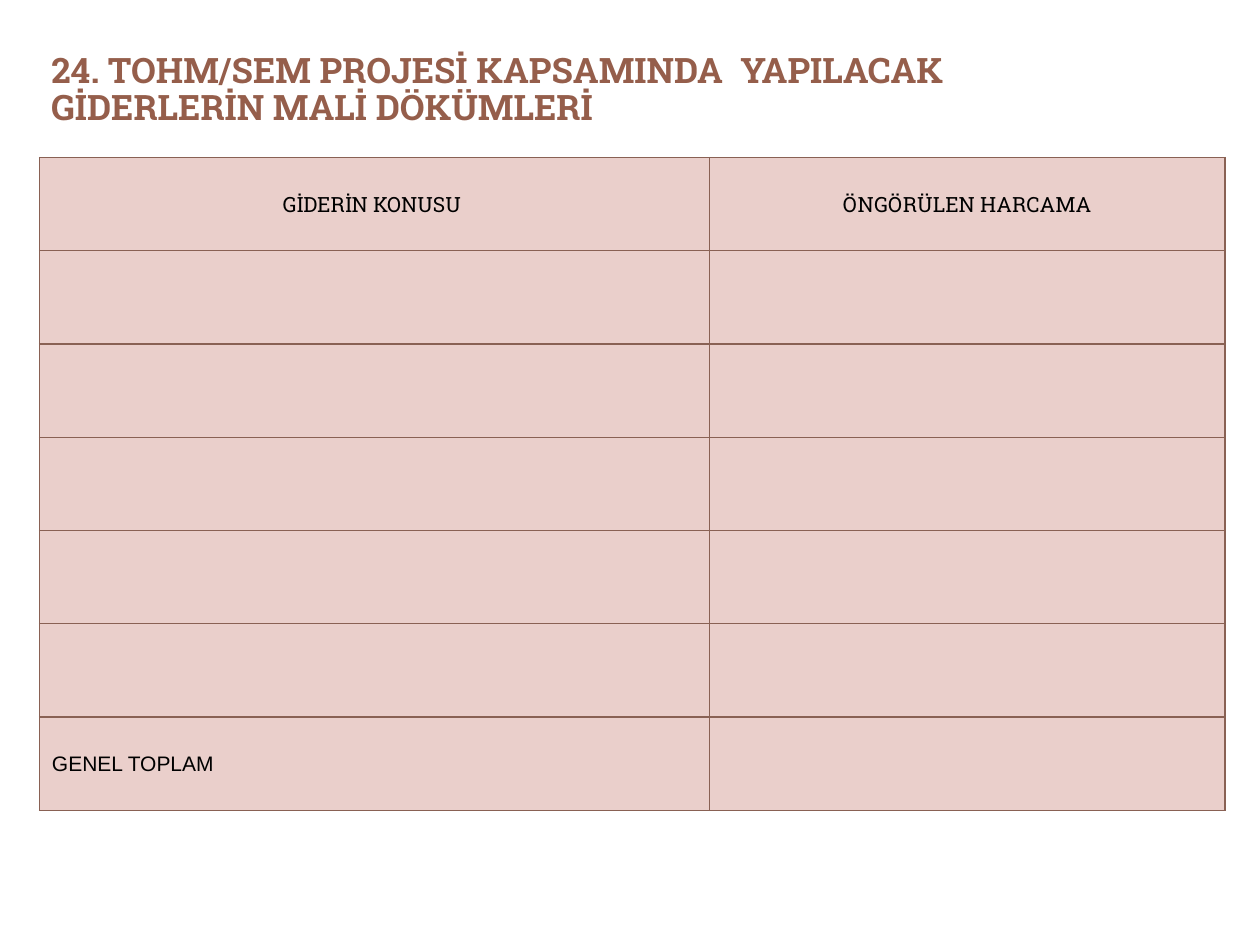
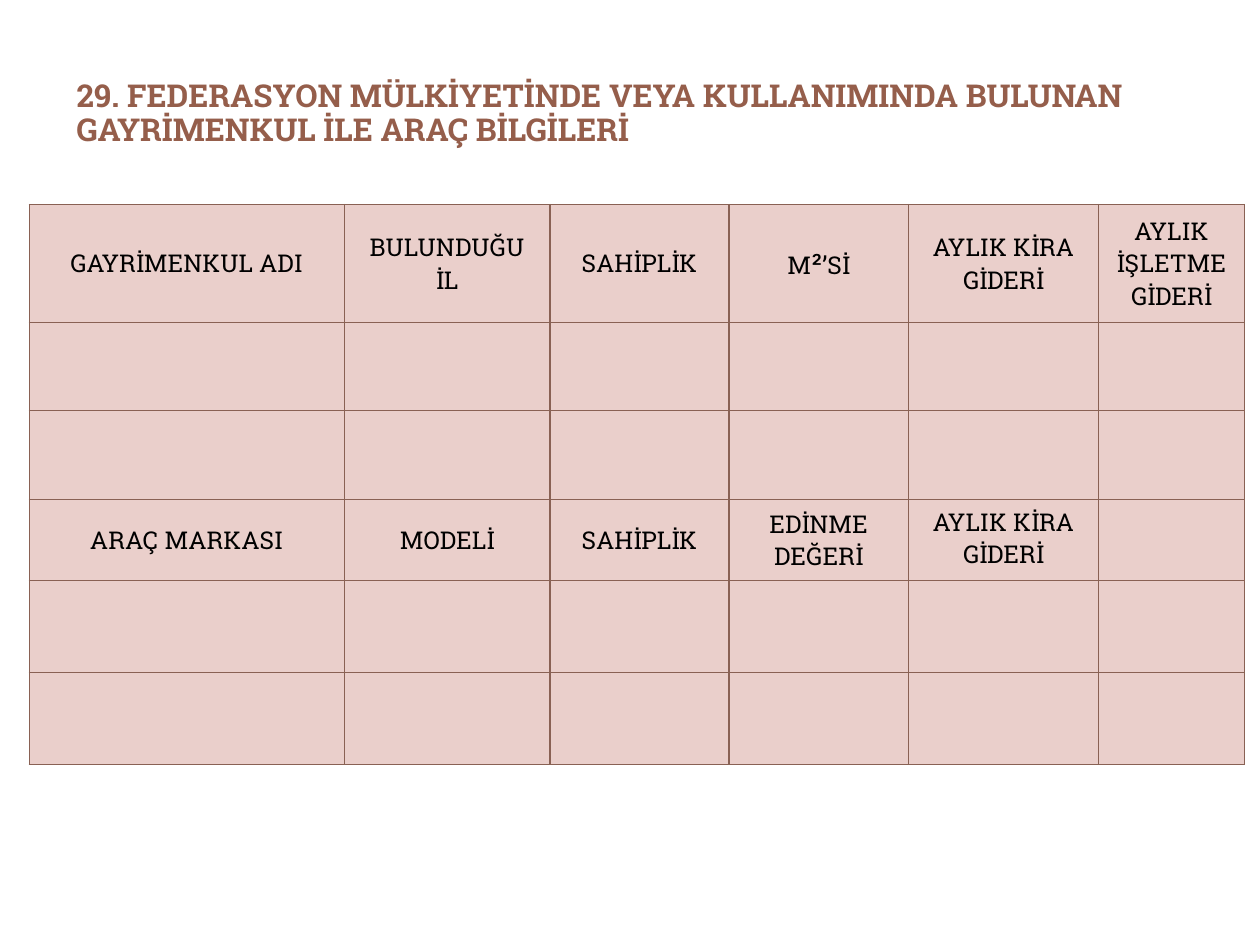
import pptx
import pptx.util
import pptx.dml.color
import pptx.enum.text
import pptx.oxml

Pt = pptx.util.Pt
ALIGN = pptx.enum.text.PP_ALIGN
ANCHOR = pptx.enum.text.MSO_ANCHOR

TITLE_COLOR = "955E4B"
CELL_COLOR = "EACFCB"
BORDER_COLOR = "896154"
TEXT_COLOR = "000000"
SLAB = "Roboto Slab"
NAMESPACE = "http://schemas.openxmlformats.org/drawingml/2006/main"


def rgb(value):
    """Turn a hex string into a colour."""
    return pptx.dml.color.RGBColor.from_string(value)


def add_run(paragraph, text, size, color, font=SLAB, bold=False):
    """Append one formatted run."""
    run = paragraph.add_run()
    run.text = text
    run.font.size = Pt(size)
    run.font.name = font
    run.font.bold = bold
    run.font.color.rgb = rgb(color)


def add_title(slide, box, text, size):
    """Place the bold slide heading at the bottom of its box."""
    heading = slide.shapes.add_textbox(*map(Pt, box)).text_frame
    heading.word_wrap = True
    heading.vertical_anchor = ANCHOR.BOTTOM
    paragraph = heading.paragraphs[0]
    paragraph.line_spacing = 0.9
    add_run(paragraph, text, size, TITLE_COLOR, bold=True)


def style_cell(cell):
    """Draw the four borders of a cell and fill it."""
    properties = cell._tc.get_or_add_tcPr()
    for side in ("lnL", "lnR", "lnT", "lnB"):
        properties.append(pptx.oxml.parse_xml(
            f'<a:{side} xmlns:a="{NAMESPACE}" w="{Pt(0.75)}"><a:solidFill>'
            f'<a:srgbClr val="{BORDER_COLOR}"/></a:solidFill></a:{side}>'))
    cell.fill.solid()
    cell.fill.fore_color.rgb = rgb(CELL_COLOR)


def write_cell(cell, runs, align=ALIGN.CENTER, anchor=ANCHOR.MIDDLE, before=0, font=SLAB):
    """Write (text, size) runs into a cell."""
    cell.vertical_anchor = anchor
    paragraph = cell.text_frame.paragraphs[0]
    paragraph.alignment = align
    paragraph.space_before = Pt(before)
    for text, size in runs:
        add_run(paragraph, text, size, TEXT_COLOR, font)


def add_form(slide, left, top, widths, heights):
    """Add an empty bordered form and return its table."""
    form = slide.shapes.add_table(
        len(heights), len(widths), Pt(left), Pt(top),
        Pt(sum(widths)), Pt(sum(heights))).table
    form.first_row = form.horz_banding = False
    for column, width in zip(form.columns, widths):
        column.width = Pt(width)
    for row, height in zip(form.rows, heights):
        row.height = Pt(height)
    for cell in form.iter_cells():
        style_cell(cell)
    return form


def build_expenses(slide):
    """Build the slide of planned expenses."""
    add_title(slide, (22.3, 21.6, 648, 55.4),
              "24. TOHM/SEM PROJESİ KAPSAMINDA  YAPILACAK GİDERLERİN MALİ DÖKÜMLERİ", 20)
    expenses = add_form(slide, 22.5, 90, [383, 294.5], [53.3] * 7)
    for column, heading in enumerate(("GİDERİN KONUSU ", "ÖNGÖRÜLEN HARCAMA")):
        write_cell(expenses.cell(0, column), [(heading, 12)], before=2.4)
    write_cell(expenses.cell(6, 0), [("GENEL TOPLAM", 12)], ALIGN.LEFT,
               before=2.4, font="Arial")


def build_assets(slide):
    """Build the slide of real estate and vehicles."""
    add_title(slide, (36.7, 20.9, 657.4, 67.7),
              "29. FEDERASYON MÜLKİYETİNDE VEYA KULLANIMINDA BULUNAN "
              "GAYRİMENKUL İLE ARAÇ BİLGİLERİ", 18)
    assets = add_form(slide, 16.7, 116.8, [180, 117.6, 102.3, 102.5, 108.8, 83.2],
                      [67.4, 50.6, 50.5, 46.7, 52.4, 52.4])
    estate_headings = (
        [("GAYRİMENKUL ADI", 14)], [("BULUNDUĞU İL", 14)], [("SAHİPLİK", 14)],
        [("M", 14), ("²", 16), ("’Sİ", 14)],
        [("AYLIK KİRA GİDERİ", 14)], [("AYLIK İŞLETME GİDERİ", 14)])
    for column, runs in enumerate(estate_headings):
        write_cell(assets.cell(0, column), runs)
    vehicle_headings = ("ARAÇ MARKASI", "MODELİ", "SAHİPLİK", "EDİNME DEĞERİ",
                        "AYLIK KİRA GİDERİ")
    for column, heading in enumerate(vehicle_headings):
        anchor = ANCHOR.TOP if column == 4 else ANCHOR.MIDDLE
        write_cell(assets.cell(3, column), [(heading, 14)], anchor=anchor, before=2.8)


def main():
    """Build and save the presentation."""
    deck = pptx.Presentation()
    deck.slide_width, deck.slide_height = Pt(720), Pt(540)
    for build in (build_expenses, build_assets):
        build(deck.slides.add_slide(deck.slide_layouts[6]))
    deck.save("out.pptx")


if __name__ == "__main__":
    main()
